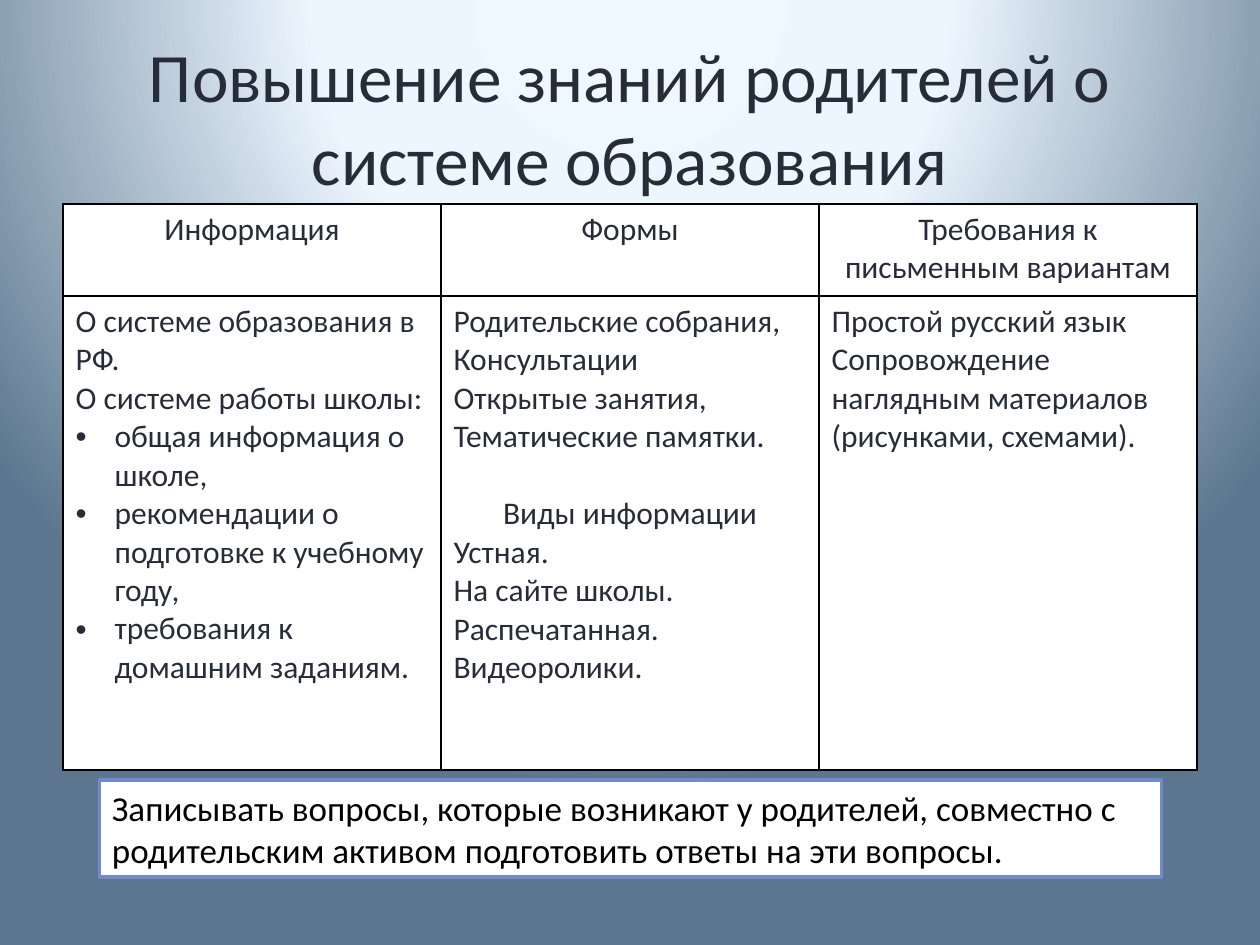
from dataclasses import dataclass

from lxml.etree import SubElement
from pptx import Presentation
from pptx.dml.color import RGBColor
from pptx.enum.shapes import MSO_SHAPE as Shape
from pptx.enum.text import MSO_ANCHOR as Anchor, PP_ALIGN as Align
from pptx.oxml.ns import qn
from pptx.slide import Slide
from pptx.table import _Cell as Cell
from pptx.text.text import TextFrame, _Paragraph as Paragraph
from pptx.util import Inches, Pt

FONT = "Calibri"
DARK = RGBColor(0x27, 0x2D, 0x38)
BLACK = RGBColor(0, 0, 0)
WHITE = RGBColor(0xFF, 0xFF, 0xFF)
BLUE = RGBColor(0x73, 0x8A, 0xC8)
GLOW_STOPS = (
    (0, RGBColor(0xF0, 0xF8, 0xFF)),
    (40, RGBColor(0xEC, 0xF6, 0xFF)),
    (100, RGBColor(0x5B, 0x76, 0x8E)),
)
GLOW_CENTRE = {"l": 50, "t": -80, "r": 50, "b": 180}
BULLET_INDENT = Inches(0.31)
BLANK_LINE = Pt(22)


@dataclass(frozen=True)
class Line:
    text: str
    align: Align = Align.LEFT
    bullet: bool = False
    space_before: int = 0


TITLE = Line("Повышение знаний родителей о системе образования", Align.CENTER)
NOTE = Line(
    "Записывать вопросы, которые возникают у родителей, совместно с "
    "родительским активом подготовить ответы на эти вопросы."
)
HEADINGS = ("Информация", "Формы", "Требования к письменным вариантам")
BODY = (
    (
        Line("О системе образования в РФ."),
        Line("О системе работы школы:"),
        Line("общая информация о школе,", bullet=True),
        Line("рекомендации о подготовке к учебному году,", bullet=True),
        Line("требования к домашним заданиям.", bullet=True),
    ),
    (
        Line("Родительские собрания,"),
        Line("Консультации"),
        Line("Открытые занятия,"),
        Line("Тематические памятки."),
        Line("Виды информации", Align.CENTER, space_before=BLANK_LINE),
        Line("Устная."),
        Line("На сайте школы."),
        Line("Распечатанная."),
        Line("Видеоролики."),
    ),
    (
        Line("Простой русский язык"),
        Line("Сопровождение наглядным материалов (рисунками, схемами)."),
    ),
)
ROWS = (tuple((Line(text, Align.CENTER),) for text in HEADINGS), BODY)
COLUMN_WIDTH = Inches(3)
ROW_HEIGHTS = (Inches(0.73), Inches(3.76))


def paint_background(slide: Slide) -> None:
    """Fill the background with a radial glow centred above the slide."""
    slide.background.fill.gradient()
    gradient = slide.background._cSld.find(".//" + qn("a:gradFill"))
    for child in list(gradient):
        gradient.remove(child)
    stops = SubElement(gradient, qn("a:gsLst"))
    for percent, color in GLOW_STOPS:
        stop = SubElement(stops, qn("a:gs"), pos=str(percent * 1000))
        SubElement(stop, qn("a:srgbClr"), val=str(color))
    circle = SubElement(gradient, qn("a:path"), path="circle")
    centre = {side: str(percent * 1000) for side, percent in GLOW_CENTRE.items()}
    SubElement(circle, qn("a:fillToRect"), centre)


def add_bullet(paragraph: Paragraph) -> None:
    properties = paragraph._p.get_or_add_pPr()
    properties.set("marL", str(BULLET_INDENT))
    properties.set("indent", str(-BULLET_INDENT))
    SubElement(properties, qn("a:buFont"), typeface="Arial")
    SubElement(properties, qn("a:buChar"), char="•")


def write_lines(
    frame: TextFrame, lines: tuple[Line, ...], size: float, color: RGBColor
) -> None:
    frame.word_wrap = True
    for index, line in enumerate(lines):
        paragraph = frame.add_paragraph() if index else frame.paragraphs[0]
        paragraph.text = line.text
        paragraph.alignment = line.align
        if line.space_before:
            paragraph.space_before = line.space_before
        paragraph.font.name = FONT
        paragraph.font.size = Pt(size)
        paragraph.font.color.rgb = color
        if line.bullet:
            add_bullet(paragraph)


def style_cell(cell: Cell) -> None:
    """Give the cell thin black borders and a white fill."""
    properties = cell._tc.get_or_add_tcPr()
    for side in ("lnL", "lnR", "lnT", "lnB"):
        border = SubElement(properties, qn(f"a:{side}"), w=str(Pt(1)))
        fill = SubElement(border, qn("a:solidFill"))
        SubElement(fill, qn("a:srgbClr"), val=str(BLACK))
    cell.fill.solid()
    cell.fill.fore_color.rgb = WHITE


def add_title(slide: Slide) -> None:
    title = slide.shapes.add_textbox(Inches(0.5), Inches(0.3), Inches(9), Inches(1.25))
    title.text_frame.vertical_anchor = Anchor.MIDDLE
    write_lines(title.text_frame, (TITLE,), 39.6, DARK)


def add_information_table(slide: Slide) -> None:
    table = slide.shapes.add_table(
        len(ROWS), len(HEADINGS), Inches(0.5), Inches(1.62),
        COLUMN_WIDTH * len(HEADINGS), sum(ROW_HEIGHTS),
    ).table
    for column in table.columns:
        column.width = COLUMN_WIDTH
    for row, height, contents in zip(table.rows, ROW_HEIGHTS, ROWS):
        row.height = height
        for cell, lines in zip(row.cells, contents):
            style_cell(cell)
            write_lines(cell.text_frame, lines, 18, DARK)


def add_note(slide: Slide) -> None:
    note = slide.shapes.add_shape(
        Shape.RECTANGLE, Inches(0.79), Inches(6.19), Inches(8.43), Inches(0.77)
    )
    note.shadow.inherit = False
    note.fill.solid()
    note.fill.fore_color.rgb = WHITE
    note.line.color.rgb = BLUE
    note.line.width = Pt(2)
    note.text_frame.vertical_anchor = Anchor.TOP
    write_lines(note.text_frame, (NOTE,), 20, BLACK)


def main() -> None:
    presentation = Presentation()
    presentation.slide_width = Inches(10)
    presentation.slide_height = Inches(7.5)
    slide = presentation.slides.add_slide(presentation.slide_layouts[6])
    paint_background(slide)
    add_title(slide)
    add_information_table(slide)
    add_note(slide)
    presentation.save("out.pptx")


if __name__ == "__main__":
    main()
